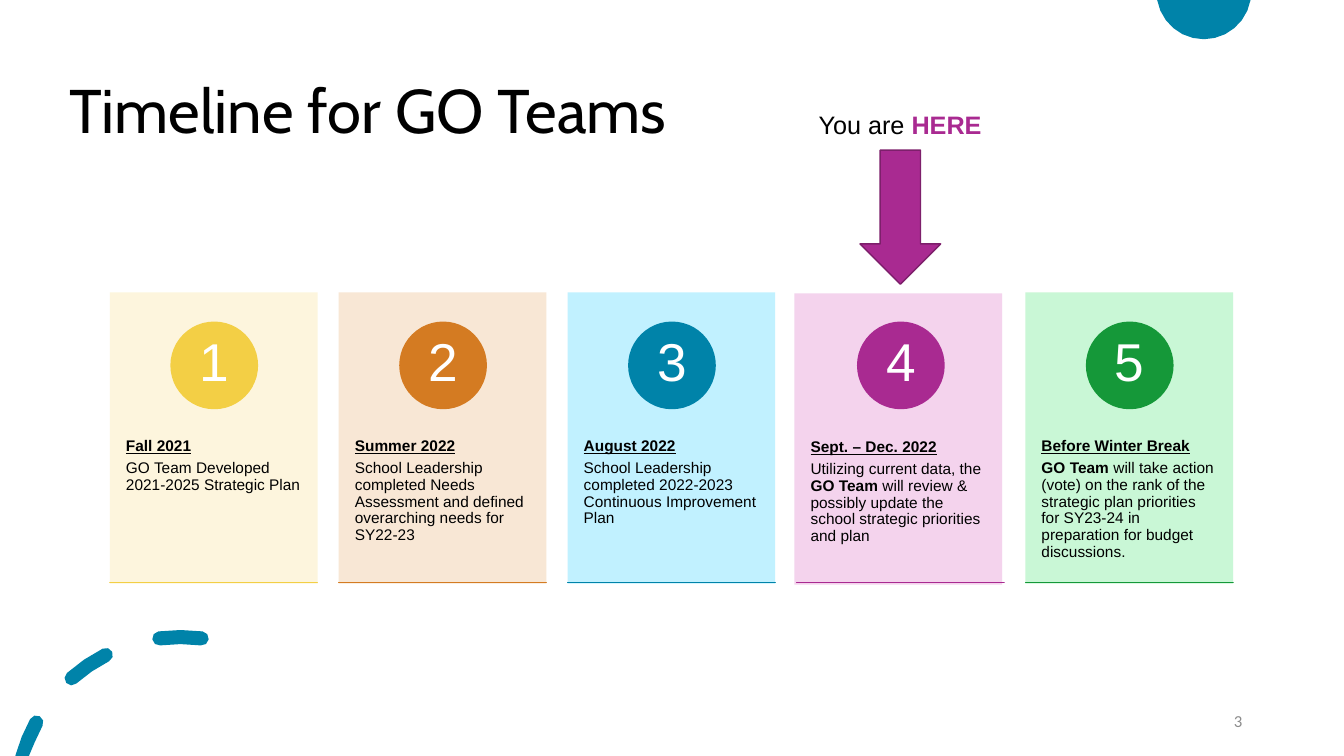
import math

from lxml import etree
from pptx import Presentation
from pptx.dml.color import RGBColor
from pptx.enum import shapes, text
from pptx.oxml import ns
from pptx.util import Inches, Pt

BLACK = RGBColor(0x00, 0x00, 0x00)
WHITE = RGBColor(0xFF, 0xFF, 0xFF)
GRAY = RGBColor(0x8C, 0x8C, 0x8C)
YELLOW = RGBColor(0xF3, 0xCF, 0x45)
ORANGE = RGBColor(0xD4, 0x7B, 0x22)
BLUE = RGBColor(0x00, 0x83, 0xA9)
PURPLE = RGBColor(0xA9, 0x2A, 0x91)
DARK_PURPLE = RGBColor(0x7D, 0x1F, 0x6B)
GREEN = RGBColor(0x15, 0x98, 0x39)
PALE_YELLOW = RGBColor(0xFD, 0xF5, 0xDA)
PALE_ORANGE = RGBColor(0xF8, 0xE5, 0xD1)
PALE_BLUE = RGBColor(0xBB, 0xF0, 0xFF)
PALE_PURPLE = RGBColor(0xF3, 0xCF, 0xEC)
PALE_GREEN = RGBColor(0xC4, 0xF7, 0xD2)

SLIDE_WIDTH, SLIDE_HEIGHT = 13.33, 7.5
CARD_LEFT, CARD_TOP, CARD_WIDTH, CARD_HEIGHT = 1.09, 2.9, 2.06, 2.89
CARD_PITCH = 2.27

# Accent, panel colour, panel offset, heading, body as (words, bold) pairs
STEPS = [
    (YELLOW, PALE_YELLOW, (0, 0), "Fall 2021",
     [("GO Team Developed 2021-2025 Strategic Plan", False)]),
    (ORANGE, PALE_ORANGE, (0, 0), "Summer 2022",
     [("School Leadership completed Needs Assessment and defined "
       "overarching needs for SY22-23", False)]),
    (BLUE, PALE_BLUE, (0, 0), "August 2022",
     [("School Leadership completed 2022-2023 Continuous Improvement Plan", False)]),
    (PURPLE, PALE_PURPLE, (-0.02, 0.01), "Sept. – Dec. 2022",
     [("Utilizing current data, the ", False), ("GO Team ", True),
      ("will review & possibly update the school strategic priorities and plan", False)]),
    (GREEN, PALE_GREEN, (0, 0), "Before Winter Break",
     [("GO Team ", True),
      ("will take action (vote) on the rank of the strategic plan priorities "
       "for SY23-24 in preparation for budget discussions.", False)]),
]


def add_text(slide, box, paragraphs, size, font="Arial", color=BLACK,
             align=text.PP_ALIGN.LEFT, anchor=text.MSO_ANCHOR.TOP,
             insets=(0.1, 0.05, 0.1, 0.05), line_spacing=1.0, space_after=0,
             auto_size=text.MSO_AUTO_SIZE.NONE):
    """Each paragraph is a list of (words, overrides) runs."""
    frame = slide.shapes.add_textbox(*map(Inches, box)).text_frame
    frame.word_wrap = True
    frame.auto_size = auto_size
    frame.vertical_anchor = anchor
    (frame.margin_left, frame.margin_top,
     frame.margin_right, frame.margin_bottom) = map(Inches, insets)
    for index, runs in enumerate(paragraphs):
        paragraph = frame.add_paragraph() if index else frame.paragraphs[0]
        paragraph.alignment = align
        paragraph.line_spacing = line_spacing
        paragraph.space_after = Pt(space_after)
        for words, overrides in runs:
            run = paragraph.add_run()
            run.text = words
            run.font.name = font
            run.font.size = Pt(size)
            run.font.bold = overrides.get("bold", False)
            run.font.underline = overrides.get("underline", False)
            run.font.color.rgb = overrides.get("color", color)


def paint(shape, fill, line=None, opacity=None):
    shape.shadow.inherit = False
    shape.fill.solid()
    shape.fill.fore_color.rgb = fill
    if opacity is not None:
        color = shape.fill._xPr.find(".//" + ns.qn("a:srgbClr"))
        etree.SubElement(color, ns.qn("a:alpha")).set("val", str(opacity * 1000))
    if line is None:
        shape.line.fill.background()
    else:
        shape.line.color.rgb = line
        shape.line.width = Pt(1)


def add_shape(slide, kind, box, fill, **style):
    paint(slide.shapes.add_shape(kind, *map(Inches, box)), fill, **style)


def arc(center, radius, start, end, steps):
    angles = [math.radians(start + (end - start) * i / steps) for i in range(steps + 1)]
    return [(center[0] + radius * math.cos(a), center[1] + radius * math.sin(a))
            for a in angles]


def add_outlines(slide, outlines, fill):
    """Draw closed outlines as one shape, cut off at the slide's edges."""
    builder = None
    for outline in outlines:
        points = [(Inches(x), Inches(min(max(y, 0), SLIDE_HEIGHT))) for x, y in outline]
        if builder is None:
            builder = slide.shapes.build_freeform(*points[0])
        else:
            builder.move_to(*points[0])
        builder.add_line_segments(points[1:], close=True)
    paint(builder.convert_to_shape(), fill)


def round_dash(center, radius, half_width, start, end):
    cap_start, cap_end = arc(center, radius, start, end, 1)
    return (arc(center, radius + half_width, start, end, 2)
            + arc(cap_end, half_width, end, end + 180, 4)[1:-1]
            + arc(center, radius - half_width, end, start, 2)
            + arc(cap_start, half_width, start + 180, start + 360, 4)[1:-1])


def add_decoration(slide):
    # Circle cut by the top edge
    add_outlines(slide, [arc((11.94, -0.08), 0.47, 10, 170, 12)], BLUE)

    # Round-ended dashes along one large circle
    spans = ((195.5, 208.7), (228.5, 243), (262.6, 277.4))
    add_outlines(slide, [round_dash((1.79, 7.95), 1.63, 0.07, *span) for span in spans],
                 BLUE)


def add_card(slide, box, number, step):
    accent, pale, (shift_x, shift_y), heading, body = step
    left, top, width, height = box
    panel_left, panel_top = left + shift_x, top + shift_y

    # Panel with heading and body
    add_shape(slide, shapes.MSO_SHAPE.RECTANGLE,
              (panel_left, panel_top, width, height), pale, opacity=90)
    add_text(slide, (panel_left, panel_top + 1.09, width, 1.73),
             [[(heading, {"bold": True, "underline": True})],
              [(words, {"bold": bold}) for words, bold in body]],
             11, insets=(0.16, 0.36, 0.16, 0), line_spacing=0.9, space_after=4)

    # Numbered circle
    add_shape(slide, shapes.MSO_SHAPE.OVAL, (left + 0.6, top + 0.29, 0.87, 0.87), accent)
    add_text(slide, (left + 0.73, top + 0.41, 0.61, 0.61), [[(str(number), {})]], 38,
             color=WHITE, align=text.PP_ALIGN.CENTER, anchor=text.MSO_ANCHOR.MIDDLE,
             insets=(0.07, 0.01, 0.07, 0.01), line_spacing=0.9)

    # Bottom rule, a flat rectangle
    add_shape(slide, shapes.MSO_SHAPE.RECTANGLE, (left, top + 2.88, width, 0),
              accent, line=accent)


def add_marker(slide, box):
    left, top, width, height = box
    add_shape(slide, shapes.MSO_SHAPE.DOWN_ARROW,
              (left + 0.51, top + 0.45, 0.8, height - 0.45), PURPLE, line=DARK_PURPLE)
    add_text(slide, (left, top, width, 0.4),
             [[("You are ", {}), ("HERE", {"bold": True, "color": PURPLE})]], 18,
             auto_size=text.MSO_AUTO_SIZE.SHAPE_TO_FIT_TEXT)


def build_timeline(slide):
    add_decoration(slide)
    add_text(slide, (0.59, 0.4, 11.5, 1.45), [[("Timeline for GO Teams", {})]], 44,
             font="Cabin", anchor=text.MSO_ANCHOR.MIDDLE, line_spacing=0.9)
    for index, step in enumerate(STEPS):
        box = (CARD_LEFT + index * CARD_PITCH, CARD_TOP, CARD_WIDTH, CARD_HEIGHT)
        add_card(slide, box, index + 1, step)
    add_text(slide, (9.42, 6.95, 3, 0.4), [[("3", {})]], 12, font="Calibri",
             color=GRAY, align=text.PP_ALIGN.RIGHT, anchor=text.MSO_ANCHOR.MIDDLE)
    add_marker(slide, (8.02, 1.04, 1.82, 1.78))


def main():
    presentation = Presentation()
    presentation.slide_width = Inches(SLIDE_WIDTH)
    presentation.slide_height = Inches(SLIDE_HEIGHT)
    build_timeline(presentation.slides.add_slide(presentation.slide_layouts[6]))
    presentation.save("out.pptx")


if __name__ == "__main__":
    main()
